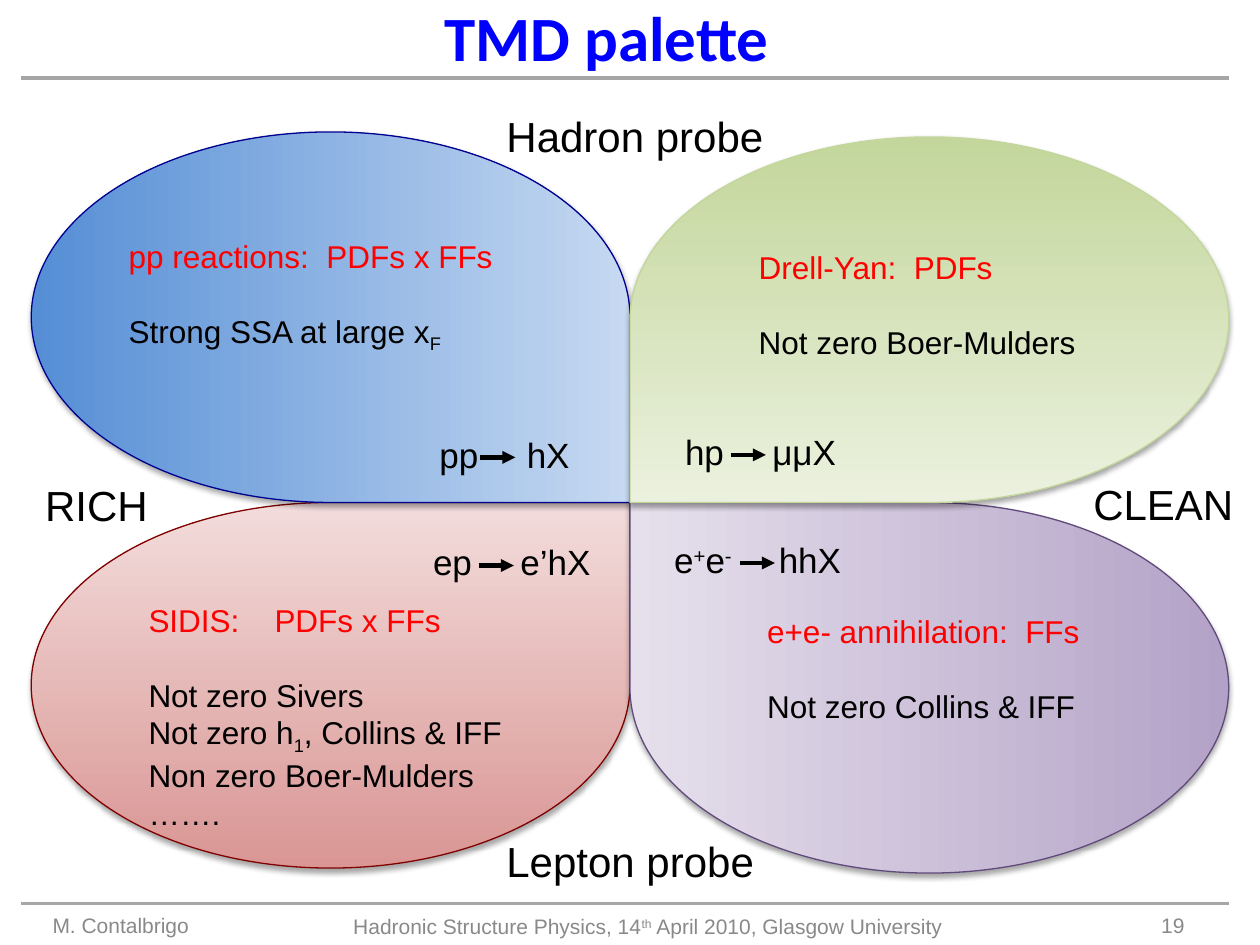
from lxml import etree
from pptx import Presentation
from pptx.dml.color import RGBColor
from pptx.enum import shapes as sh, text as tx
from pptx.oxml import parse_xml
from pptx.oxml.ns import nsdecls, qn
from pptx.util import Cm, Pt

BLACK = RGBColor(0x00, 0x00, 0x00)
RED = RGBColor(0xFF, 0x00, 0x00)
BLUE = RGBColor(0x00, 0x00, 0xFF)
FOOTER_GREY = RGBColor(0x89, 0x89, 0x89)
RULE_GREY = RGBColor(0xA6, 0xA6, 0xA6)
PINK = [RGBColor(0xD9, 0x96, 0x94), RGBColor(0xF2, 0xDC, 0xDB)]
SKY = [RGBColor(0x55, 0x8E, 0xD5), RGBColor(0xC6, 0xD9, 0xF1)]
PURPLE = [RGBColor(0xB3, 0xA2, 0xC7), RGBColor(0xE6, 0xE0, 0xEC)]
GREEN = [RGBColor(0xC3, 0xD6, 0x9B), RGBColor(0xEB, 0xF1, 0xDE)]
MAROON = RGBColor(0x80, 0x00, 0x00)
NAVY = RGBColor(0x00, 0x00, 0x90)
VIOLET = RGBColor(0x60, 0x4A, 0x7B)

SUB, SUPER = -25000, 30000
CENTRE_X, CENTRE_Y, PETAL_WIDTH = 12.7, 10.13, 12.07
ARROW_LENGTH = 0.71

# rotation, side (-1 left, 1 right), level (-1 top, 1 bottom), height, colours, outline
PETALS = [
    (0, -1, 1, 7.37, PINK, MAROON),
    (90, -1, -1, 7.47, SKY, NAVY),
    (270, 1, 1, 7.47, PURPLE, VIOLET),
    (180, 1, -1, 7.37, GREEN, GREEN[0]),
]
# placeholder index, box, heading, remarks
PROCESSES = [
    (1, (2.34, 4.65, 8.69, 2.57), "pp reactions:  PDFs x FFs",
     [["Strong SSA at large x", ("F", SUB)]]),
    (2, (15.04, 4.88, 7.62, 2.57), "Drell-Yan:  PDFs",
     [["Not zero Boer-Mulders"]]),
    (3, (2.74, 11.99, 8.26, 4.88), "SIDIS:\tPDFs x FFs",
     [["Not zero Sivers"],
      ["Not zero h", ("1", SUB), ", Collins & IFF"],
      ["Non zero Boer-Mulders"],
      ["……."]]),
    (4, (15.21, 12.22, 7.77, 2.57), "e+e- annihilation:  FFs",
     [["Not zero Collins & IFF"]]),
]
# box, wording, tab position, arrow start
REACTIONS = [
    ((8.61, 8.61, 3.15, 1.12), ["pp\thX"], 1.76, (9.68, 9.22)),
    ((13.56, 8.56, 3.58, 1.12), ["hp\tμμX"], 1.76, (14.73, 9.17)),
    ((8.48, 10.77, 3.71, 1.12), ["ep\te’hX"], 1.76, (9.65, 11.4)),
    ((13.34, 10.74, 4.01, 1.12),
     ["e", ("+", SUPER), "e", ("-", SUPER), "\thhX"], 2.11, (14.91, 11.35)),
]
LABELS = [
    ((9.96, 2.11, 5.74, 1.27), "Hadron probe"),
    ((9.96, 16.71, 5.56, 1.27), "Lepton probe"),
    ((0.66, 9.55, 2.59, 1.27), "RICH"),
    ((21.79, 9.53, 3.35, 1.27), "CLEAN"),
]
FOOTER = [
    ((0.81, 18.01, 5.92, 1.02), ["M. Contalbrigo"], tx.PP_ALIGN.LEFT),
    ((4.88, 18.03, 16.36, 1.02),
     ["Hadronic Structure Physics, 14", ("th", SUPER),
      " April 2010, Glasgow University"], tx.PP_ALIGN.CENTER),
    ((18.21, 18.01, 5.92, 1.02), ["19"], tx.PP_ALIGN.RIGHT),
]


def apply(target, values):
    for name, value in values.items():
        setattr(target, name, value)


def place(shape, box):
    apply(shape, dict(zip(("left", "top", "width", "height"), map(Cm, box))))


def add_tab(paragraph, position):
    tabs = etree.SubElement(paragraph._p.get_or_add_pPr(), qn("a:tabLst"))
    etree.SubElement(tabs, qn("a:tab"), pos=str(Cm(position)), algn="l")


def write(paragraph, pieces, size, colour=BLACK, font="Arial", bold=False):
    """Fill a paragraph; a (text, baseline) piece is raised or lowered."""
    for piece in pieces:
        wording, baseline = (piece, 0) if isinstance(piece, str) else piece
        run = paragraph.add_run()
        run.text = wording
        apply(run.font, {"name": font, "size": Pt(size), "bold": bold})
        run.font.color.rgb = colour
        if baseline:
            run._r.get_or_add_rPr().set("baseline", str(baseline))


def add_text(parent, box, pieces, size, colour=BLACK, tab=None,
             align=tx.PP_ALIGN.LEFT, anchor=tx.MSO_ANCHOR.TOP):
    textbox = parent.add_textbox(*map(Cm, box))
    apply(textbox.text_frame, {"word_wrap": True, "vertical_anchor": anchor})
    if align == tx.PP_ALIGN.LEFT:
        textbox.text_frame.margin_right = 0
    paragraph = textbox.text_frame.paragraphs[0]
    if tab:
        add_tab(paragraph, tab)
    paragraph.alignment = align
    write(paragraph, pieces, size, colour)


def add_line(parent, x, y, length, colour, width, arrow=False):
    line = parent.add_connector(sh.MSO_CONNECTOR.STRAIGHT,
                                Cm(x), Cm(y), Cm(x + length), Cm(y))
    line.line.color.rgb = colour
    line.line.width = Pt(width)
    if arrow:
        etree.SubElement(line.line._get_or_add_ln(), qn("a:tailEnd"), type="triangle")
    etree.SubElement(line._element.spPr, qn("a:effectLst"))


def add_petal(slide, layer, rotation, side, level, height, colours, outline):
    """A teardrop whose tip touches the centre of the palette."""
    middle_x = CENTRE_X + side * PETAL_WIDTH / 2
    middle_y = CENTRE_Y + level * height / 2
    w, h = (height, PETAL_WIDTH) if rotation % 180 else (PETAL_WIDTH, height)
    petal = slide.shapes.add_shape(sh.MSO_SHAPE.TEAR, Cm(middle_x - w / 2),
                                   Cm(middle_y - h / 2), Cm(w), Cm(h))
    petal.rotation = rotation
    petal.fill.gradient()
    petal.fill.gradient_angle = 90
    for stop, colour in zip(petal.fill.gradient_stops, colours):
        stop.color.rgb = colour
    petal.line.color.rgb = outline
    petal.line.width = Pt(0.75)
    petal.shadow.inherit = False
    petal._element.spPr.find(qn("a:effectLst")).append(parse_xml(
        f'<a:outerShdw {nsdecls("a")} blurRad="40000" dist="23000" dir="5400000" '
        'rotWithShape="0"><a:srgbClr val="000000"><a:alpha val="35000"/>'
        '</a:srgbClr></a:outerShdw>'))
    # Petals lie behind the placeholders
    slide.shapes._spTree.insert(2 + layer, petal._element)


def fill_process(body, box, heading, remarks):
    place(body, box)
    frame = body.text_frame
    apply(frame, {"word_wrap": True, "auto_size": tx.MSO_AUTO_SIZE.NONE,
                  "vertical_anchor": tx.MSO_ANCHOR.TOP})
    for number, pieces in enumerate([[heading], *remarks]):
        paragraph = frame.add_paragraph() if number else frame.paragraphs[0]
        properties = paragraph._p.get_or_add_pPr()
        apply_indent = {"marL": "0", "indent": "0"}
        properties.attrib.update(apply_indent)
        etree.SubElement(properties, qn("a:buNone"))
        if number == 0 and "\t" in heading:
            add_tab(paragraph, 2.54)
        paragraph.space_before = Pt(21 if number == 1 else 0)
        write(paragraph, pieces, 18, BLACK if number else RED)


def add_reaction(slide, box, pieces, tab, arrow_start):
    group = slide.shapes.add_group_shape().shapes
    add_text(group, box, pieces, 20, tab=tab)
    add_line(group, *arrow_start, ARROW_LENGTH, BLACK, 2.5, arrow=True)


def main():
    prs = Presentation()
    apply(prs, {"slide_width": Cm(25.4), "slide_height": Cm(19.05)})
    slide = prs.slides.add_slide(prs.slide_layouts.get_by_name("Comparison"))

    # Title
    title = slide.shapes.title
    place(title, (8.66, -0.15, 7.14, 1.8))
    apply(title.text_frame, {"word_wrap": False, "auto_size": tx.MSO_AUTO_SIZE.NONE,
                             "vertical_anchor": tx.MSO_ANCHOR.TOP})
    title.text_frame.paragraphs[0].alignment = tx.PP_ALIGN.CENTER
    write(title.text_frame.paragraphs[0], ["TMD palette"], 36, BLUE, "Calibri", True)

    # Palette with its four processes
    for layer, petal in enumerate(PETALS):
        add_petal(slide, layer, *petal)
    bodies = {p.placeholder_format.idx: p for p in slide.placeholders}
    for index, *process in PROCESSES:
        fill_process(bodies[index], *process)
    for reaction in REACTIONS:
        add_reaction(slide, *reaction)
    for box, wording in LABELS:
        add_text(slide.shapes, box, [wording], 24)

    # Rules and footer
    for y in (1.57, 18.21):
        add_line(slide.shapes, 0.43, y, 24.34, RULE_GREY, 2)
    for box, pieces, align in FOOTER:
        add_text(slide.shapes, box, pieces, 12, FOOTER_GREY, align=align,
                 anchor=tx.MSO_ANCHOR.BOTTOM)

    prs.save("out.pptx")


if __name__ == "__main__":
    main()
